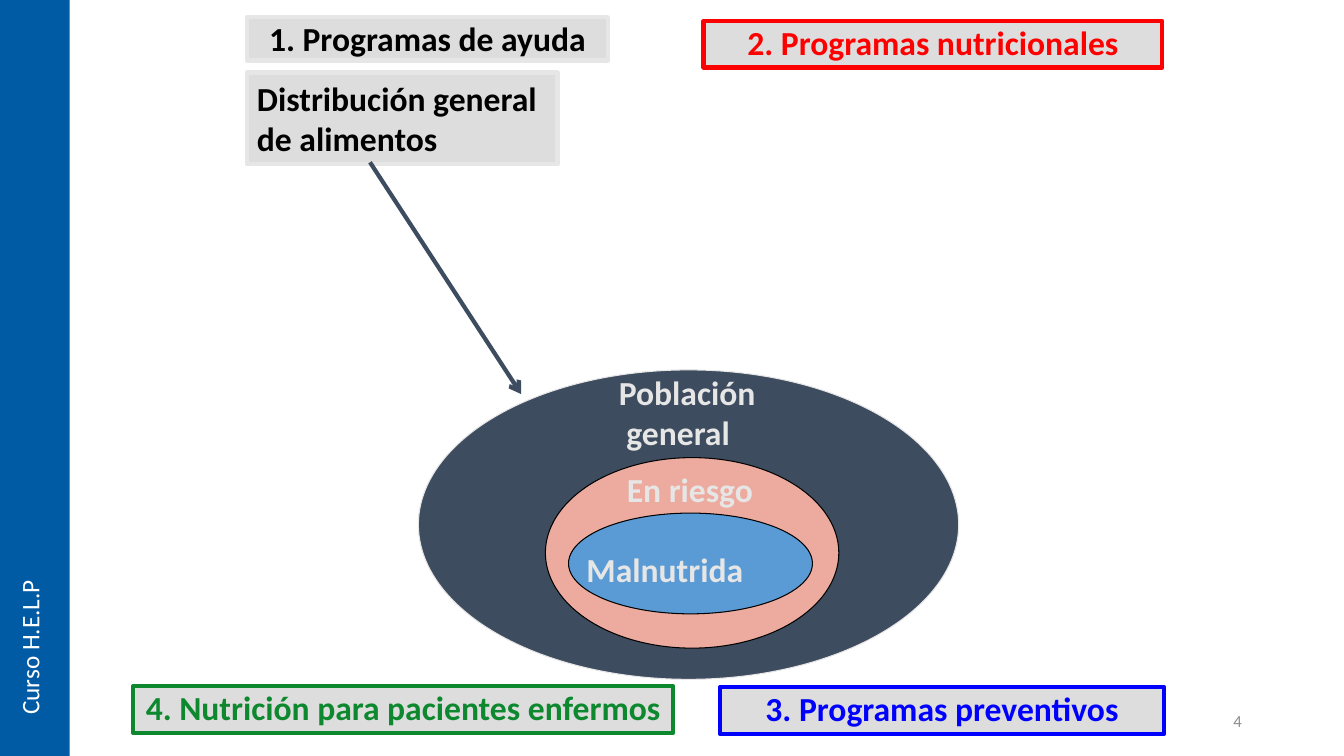
from pptx import Presentation
from pptx.dml.color import RGBColor as RGB
from pptx.enum.shapes import MSO_CONNECTOR as LINK, MSO_SHAPE as KIND
from pptx.enum.text import MSO_ANCHOR as ANCHOR, PP_ALIGN as ALIGN
from pptx.oxml.ns import qn
from pptx.util import Inches, Pt
from lxml import etree

HUE = {"navy": "3D4C5F", "pink": "ECAB9E", "sky": "5B9BD5", "pale": "E7E6E6",
       "gray": "DDDDDD", "black": "000000", "red": "FF0000", "green": "0E882E",
       "blue": "0000FF", "band": "005BA4", "white": "FFFFFF", "dim": "8C8C8C"}

deck = Presentation()
deck.slide_width, deck.slide_height = Inches(13.33), Inches(7.5)
page = deck.slides.add_slide(deck.slide_layouts[6])
shapes = page.shapes


def place(x, y, w=0, h=0):
    wide, high = deck.slide_width / 100, deck.slide_height / 100
    return [round(v) for v in (x * wide, y * high, w * wide, h * high)]


def write(box, lines, hue, size=24, bold=True, align=ALIGN.LEFT, space=1, wrap=True):
    frame = box.text_frame
    frame.word_wrap = wrap
    frame.vertical_anchor = ANCHOR.TOP
    frame.text = lines
    for para in frame.paragraphs:
        para.alignment = align
        para.line_spacing = space
        font = para.font
        font.name, font.size, font.bold = "Calibri", Pt(size), bold
        font.color.rgb = RGB.from_string(HUE[hue])
    return frame


rings = [((31.13, 48.93, 40.2, 40.93), "navy", "pale"),
         ((40.58, 60.53, 21.83, 25.2), "pink", "black"),
         ((42.3, 67.87, 18.15, 13.33), "sky", "black")]
boxes = [("2. Programas nutricionales", (52.35, 2.8, 34.13, 6.13), "red", "red"),
         ("1. Programas de ayuda", (18.38, 2.27, 26.85, 5.73), "pale", "black"),
         ("Distribución general de alimentos", (18.38, 9.6, 23.1, 12.13), "pale", "black"),
         ("4. Nutrición para pacientes enfermos", (9.9, 90.8, 40.2, 6.13), "green", "green"),
         ("3. Programas preventivos", (53.55, 90.93, 33.08, 6.13), "blue", "blue")]
labels = [("Población\n general", (45.3, 48.53, 14.18, 12.13)),
          ("En riesgo", (45.9, 61.33, 13.58, 6.67)),
          ("Malnutrida", (42.9, 72, 17.33, 6.67))]

for area, fill, edge in rings:
    ring = shapes.add_shape(KIND.OVAL, *place(*area))
    ring.shadow.inherit = False
    ring.fill.solid()
    ring.fill.fore_color.rgb = RGB.from_string(HUE[fill])
    ring.line.color.rgb = RGB.from_string(HUE[edge])
    ring.line.width = Pt(0.75)

for text, area in labels:
    write(shapes.add_textbox(*place(*area)), text, "pale")

for text, area, edge, ink in boxes:
    box = shapes.add_shape(KIND.RECTANGLE, *place(*area))
    box.shadow.inherit = False
    box.fill.solid()
    box.fill.fore_color.rgb = RGB.from_string(HUE["gray"])
    box.line.color.rgb = RGB.from_string(HUE[edge])
    box.line.width = Pt(3)
    if text[0].isdigit():
        write(box, text, ink, align=ALIGN.CENTER, space=0.9)
    else:
        write(box, text, ink)

start, end = place(27.53, 21.47)[:2], place(38.78, 52.13)[:2]
arrow = shapes.add_connector(LINK.STRAIGHT, *start, *end)
arrow.line.color.rgb = RGB.from_string(HUE["navy"])
arrow.line.width = Pt(3)
etree.SubElement(arrow.line._get_or_add_ln(), qn("a:tailEnd"), type="arrow")
etree.SubElement(arrow._element.spPr, qn("a:effectLst"))

band = shapes.add_shape(KIND.RECTANGLE, *place(0, 0, 5.18, 100))
band.shadow.inherit = False
band.fill.solid()
band.fill.fore_color.rgb = RGB.from_string(HUE["band"])
band.line.fill.background()

course = shapes.add_textbox(*place(0.68, 74.8, 3.75, 21.07))
frame = write(course, "Curso H.E.L.P", "white", 18, False, wrap=False)
frame._txBody.bodyPr.set("vert", "vert270")

number = shapes.add_textbox(*place(70.65, 92.67, 22.5, 5.33))
frame = write(number, "4", "dim", 12, False, ALIGN.RIGHT)
frame.vertical_anchor = ANCHOR.MIDDLE

deck.save("out.pptx")
